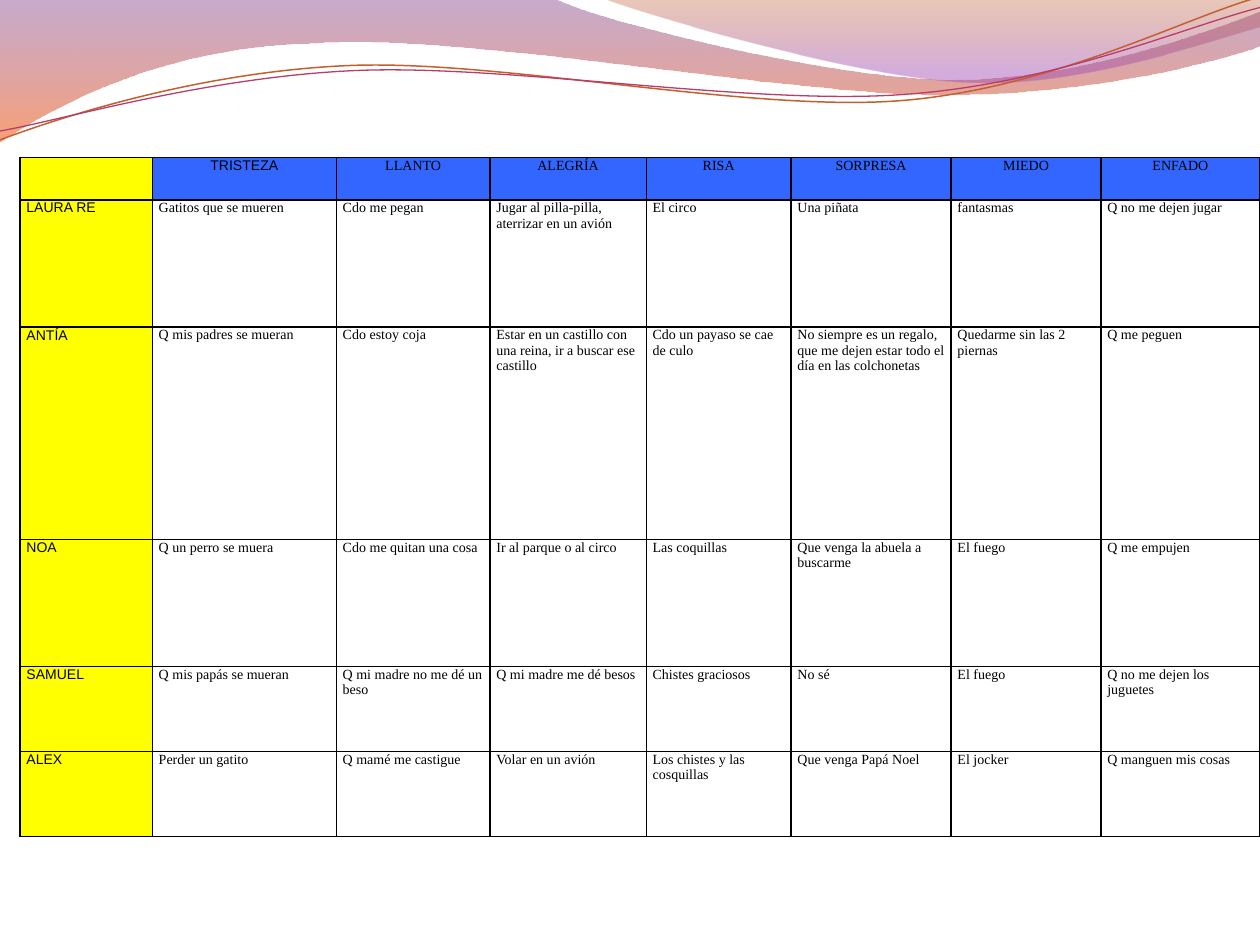
import math
import pptx
import pptx.util
import pptx.dml.color
import pptx.enum.text
import pptx.oxml
import pptx.oxml.ns

qn = pptx.oxml.ns.qn


def tint(code):
    return pptx.dml.color.RGBColor.from_string(code)


def turn(point, pivot, angle):
    dx, dy = point[0] - pivot[0], point[1] - pivot[1]
    sin, cos = math.sin(math.radians(angle)), math.cos(math.radians(angle))
    return pivot[0] + dx * cos - dy * sin, pivot[1] + dx * sin + dy * cos


class Sheet:
    wide, high = 10, 7.5
    cols, rows = 10, 7.5
    size = 8
    tilt = -2.7
    head, body = "Arial", "Times New Roman"
    ink, blue, gold = "000000", "3366FF", "FFFF00"

    def __init__(self, deck):
        deck.slide_width = pptx.util.Inches(self.wide)
        deck.slide_height = pptx.util.Inches(self.high)
        self.slide = deck.slides.add_slide(deck.slide_layouts[6])
        self.across = deck.slide_width / self.cols
        self.down = deck.slide_height / self.rows

    def x(self, count):
        return pptx.util.Emu(round(count * self.across))

    def y(self, count):
        return pptx.util.Emu(round(count * self.down))

    def curve(self, start, parts, close, pivot=(0, 0), angle=0):
        flat = [start] + [part[i:i + 2] for part in parts
                          for i in range(0, len(part), 2)]
        spots = [turn(point, pivot, -angle) for point in flat]
        points = [(self.x(a), self.y(b)) for a, b in spots]
        pen = self.slide.shapes.build_freeform(*points[0])
        pen.add_line_segments(points[1:], close=close)
        shape = pen.convert_to_shape()
        shape.shadow.inherit = False
        shape.rotation = angle
        steps = iter(list(shape._element.spPr.iter(qn("a:lnTo"))))
        for part in parts:
            first = next(steps)
            if len(part) == 6:
                first.tag = qn("a:cubicBezTo")
                for _ in range(2):
                    step = next(steps)
                    first.append(step[0])
                    step.getparent().remove(step)
        return shape

    def wave(self, start, parts, stops):
        shape = self.curve(start, parts, True)
        shape.line.fill.background()
        shape.fill.gradient()
        shape.fill.gradient_angle = 270
        for stop, (place, code, _) in zip(shape.fill.gradient_stops, stops):
            stop.position = place
            stop.color.rgb = tint(code)
        marks = shape._element.spPr.iter(qn("a:gs"))
        for mark, (_, _, alpha) in zip(marks, stops):
            node = pptx.oxml.parse_xml(
                f'<a:alpha {pptx.oxml.ns.nsdecls("a")} val="{alpha * 1000}"/>')
            mark[0].append(node)

    def thread(self, start, parts, pivot, code, width):
        shape = self.curve(start, parts, False, pivot, self.tilt)
        shape.fill.background()
        shape.line.color.rgb = tint(code)
        shape.line.width = pptx.util.Pt(width)

    def edge(self, cell):
        props = cell._tc.get_or_add_tcPr()
        for index, side in enumerate(("lnL", "lnR", "lnT", "lnB")):
            props.insert(index, pptx.oxml.parse_xml(
                f'<a:{side} {pptx.oxml.ns.nsdecls("a")} w="12700"><a:solidFill>'
                f'<a:srgbClr val="{self.ink}"/></a:solidFill></a:{side}>'))

    def cell(self, cell, text, font, fill, center):
        cell.margin_left = cell.margin_right = self.x(0.05)
        cell.margin_top = cell.margin_bottom = 0
        if fill:
            cell.fill.solid()
            cell.fill.fore_color.rgb = tint(fill)
        else:
            cell.fill.background()
        self.edge(cell)
        if not text:
            return
        cell.text = text
        para = cell.text_frame.paragraphs[0]
        para.font.size = pptx.util.Pt(self.size)
        para.font.name = font
        para.font.color.rgb = tint(self.ink)
        if center:
            para.alignment = pptx.enum.text.PP_ALIGN.CENTER

    def table(self, left, top, widths, heights, data):
        frame = self.slide.shapes.add_table(
            len(heights), len(widths), self.x(left), self.y(top),
            self.x(sum(widths)), self.y(sum(heights)))
        grid = frame.table
        grid.first_row = grid.horz_banding = False
        for col, width in zip(grid.columns, widths):
            col.width = self.x(width)
        for row, height in zip(grid.rows, heights):
            row.height = self.y(height)
        for r, line in enumerate(data):
            for c, text in enumerate(line):
                fill = self.gold if c == 0 else self.blue if r == 0 else None
                font = self.head if c == 0 or (r, c) == (0, 1) else self.body
                self.cell(grid.cell(r, c), text, font, fill, r == 0)


ANSWERS = [
    ["", "TRISTEZA", "LLANTO", "ALEGRÍA", "RISA", "SORPRESA", "MIEDO", "ENFADO"],
    ["LAURA RE", "Gatitos que se mueren", "Cdo me pegan",
     "Jugar al pilla-pilla, aterrizar en un avión", "El circo", "Una piñata",
     "fantasmas", "Q no me dejen jugar"],
    ["ANTÍA", "Q mis padres se mueran", "Cdo estoy coja",
     "Estar en un castillo con una reina, ir a buscar ese castillo",
     "Cdo un payaso se cae de culo",
     "No siempre es un regalo, que me dejen estar todo el día en las colchonetas",
     "Quedarme sin las 2 piernas", "Q me peguen"],
    ["NOA", "Q un perro se muera", "Cdo me quitan una cosa",
     "Ir al parque o al circo", "Las coquillas", "Que venga la abuela a buscarme",
     "El fuego", "Q me empujen"],
    ["SAMUEL", "Q mis papás se mueran", "Q mi madre no me dé un beso",
     "Q mi madre me dé besos", "Chistes graciosos", "No sé", "El fuego",
     "Q no me dejen los juguetes"],
    ["ALEX", "Perder un gatito", "Q mamé me castigue", "Volar en un avión",
     "Los chistes y las cosquillas", "Que venga Papá Noel", "El jocker",
     "Q manguen mis cosas"],
]


def main():
    deck = pptx.Presentation()
    sheet = Sheet(deck)
    sheet.wave((0, 0), [
        (4.4, -0.01), (4.76, 0.17, 6.64, 0.63, 7.58, 0.63),
        (8.53, 0.63, 9.58, 0.26, 10, 0.09), (10.01, 0.36),
        (9.83, 0.44, 8.7, 0.76, 7.46, 0.75), (6.22, 0.75, 3.82, 0.28, 2.57, 0.34),
        (1.29, 0.36, 0.46, 0.83, -0.01, 1.13), (0, 0),
    ], [(0, "834591", 45), (1, "F35307", 55)])
    sheet.wave((4.79, -0.01), [
        (5.09, 0.11, 6.82, 0.62, 7.69, 0.65), (8.56, 0.69, 9.61, 0.32, 10, 0.21),
        (10, 0), (4.79, -0.01),
    ], [(0, "B74915", 30), (0.8, "A14BB4", 45)])
    sheet.thread((0, 1.11), [
        (0.48, 0.93, 1.58, 0.57, 2.77, 0.52), (3.95, 0.47, 5.93, 0.89, 7.13, 0.8),
        (8.33, 0.71, 9.38, 0.15, 9.98, -0.02),
    ], (4.99, 0.58), "C45F30", 0.85)
    sheet.thread((0, 1.04), [
        (0.47, 0.96, 1.64, 0.61, 2.83, 0.56), (4.03, 0.51, 5.97, 0.84, 7.17, 0.75),
        (8.36, 0.67, 9.41, 0.21, 10, 0.06),
    ], (5, 0.59), "B83D68", 0.75)
    heights = [5.39 * lines / 64 for lines in (4, 12, 20, 12, 8, 8)]
    sheet.table(0.16, 1.25, [1.05, 1.46, 1.22, 1.24, 1.15, 1.27, 1.19, 1.26],
                heights, ANSWERS)
    deck.save("out.pptx")


if __name__ == "__main__":
    main()
